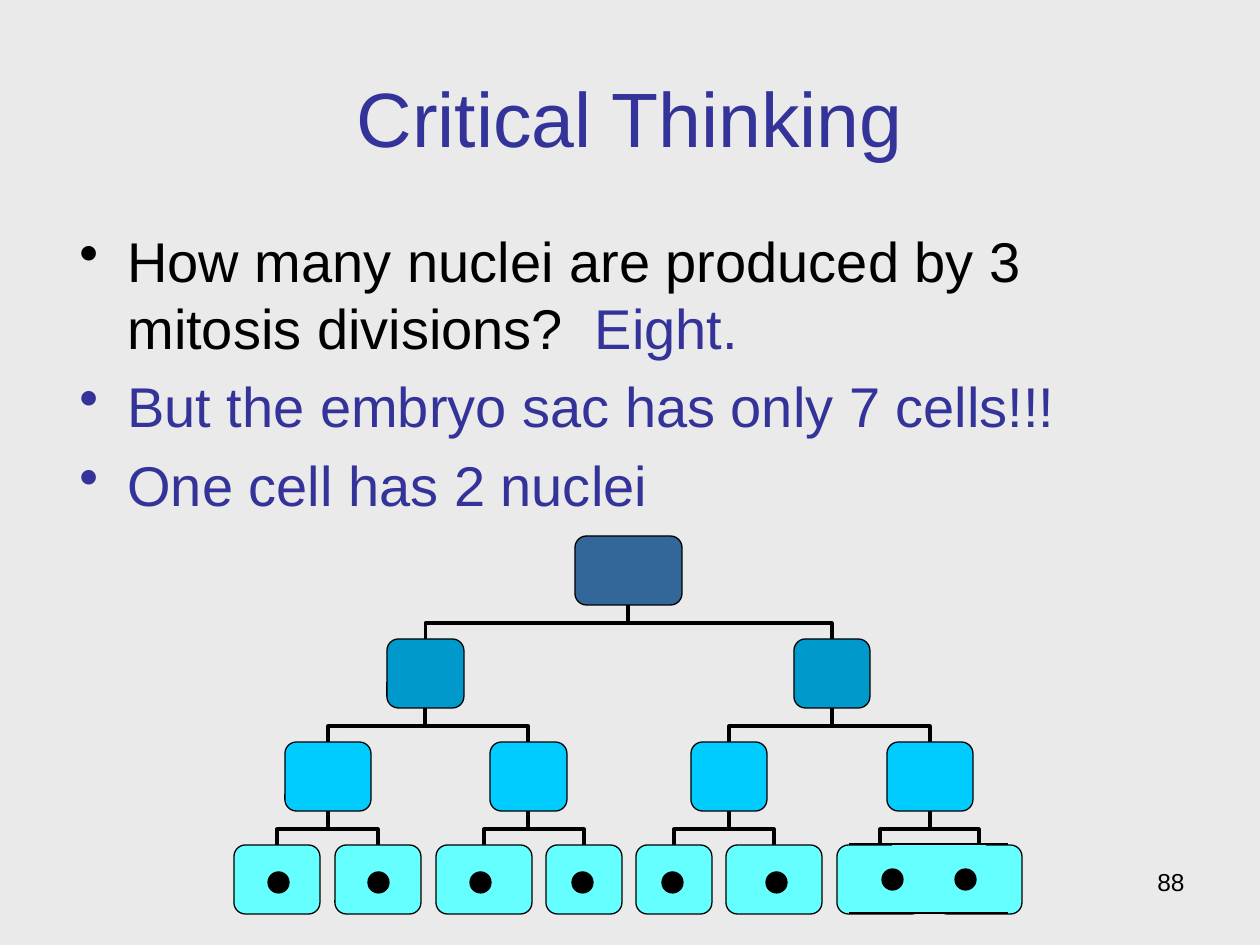
"""Build the slide on nuclei and cells of the embryo sac."""
from dataclasses import dataclass
from typing import NamedTuple

from lxml import etree
from pptx import Presentation
from pptx.dml.color import RGBColor
from pptx.enum.shapes import MSO_CONNECTOR, MSO_SHAPE
from pptx.enum.text import MSO_ANCHOR, PP_ALIGN
from pptx.oxml.ns import qn
from pptx.util import Emu, Pt

ELBOW, LINE = MSO_CONNECTOR.ELBOW, MSO_CONNECTOR.STRAIGHT
ROUND, RECT, OVAL = MSO_SHAPE.ROUNDED_RECTANGLE, MSO_SHAPE.RECTANGLE, MSO_SHAPE.OVAL
LEFT, CENTER, RIGHT = PP_ALIGN.LEFT, PP_ALIGN.CENTER, PP_ALIGN.RIGHT
MIDDLE = MSO_ANCHOR.MIDDLE
SCALE = 914400 / 126


@dataclass(frozen=True)
class Theme:
    font: str = "Arial"
    back: str = "EAEAEA"
    ink: str = "000000"
    accent: str = "333399"
    levels: tuple = ("336699", "0099CC", "00CCFF", "66FFFF")
    title: int = 44
    body: int = 32
    small: int = 14
    branch: float = 2.25
    edge: float = 0.75
    rim: float = 1


class Box(NamedTuple):
    x: int
    y: int
    w: int
    h: int

    @property
    def mid(self) -> float:
        return self.x + self.w / 2


class Part(NamedTuple):
    text: str
    color: str


THEME = Theme()
TOP, PITCH, HIGH, DOT = 536, 103, 69, 21
TREE = (
    ((575, 107),),
    ((387, 77), (794, 76)),
    ((285, 86), (490, 77), (691, 76), (887, 86)),
    ((234, 86), (335, 86), (436, 96), (546, 76),
     (636, 76), (726, 96), (837, 86), (936, 86)),
)
DOTS = ((268, 872), (368, 872), (470, 872), (572, 872),
        (662, 872), (766, 872), (882, 869), (955, 869))
MERGE = Box(892, 844, 94, 69)
POINTS = (
    (Part("How many nuclei are produced by 3 mitosis divisions?  ", THEME.ink),
     Part("Eight.", THEME.accent)),
    (Part("But the embryo sac has only 7 cells!!!", THEME.accent),),
    (Part("One cell has 2 nuclei", THEME.accent),),
)


def px(size: float) -> Emu:
    """Turn pixels into EMU."""
    return Emu(round(size * SCALE))


def rgb(code: str) -> RGBColor:
    """Read a hex colour."""
    return RGBColor.from_string(code)


def place(shape, box: Box) -> None:
    """Move a shape to a box."""
    shape.left, shape.top, shape.width, shape.height = map(px, box)


def style(para, size: int, align, color: str = "") -> None:
    """Set the font and alignment of a paragraph."""
    para.alignment = align
    para.font.name, para.font.size = THEME.font, Pt(size)
    if color:
        para.font.color.rgb = rgb(color)


def bullet(para) -> None:
    """Give a paragraph a hanging bullet."""
    props = para._p.get_or_add_pPr()
    props.set("marL", str(px(48)))
    props.set("indent", str(-px(48)))
    mark = etree.Element(qn("a:buChar"), char="•")
    rest = props.find(qn("a:defRPr"))
    rest.addprevious(mark)


def block(slide, box: Box):
    """Add a wrapping text box and return its frame."""
    frame = slide.shapes.add_textbox(*map(px, box)).text_frame
    frame.word_wrap = True
    return frame


def points(slide, box: Box) -> None:
    """Write the bulleted points."""
    frame = block(slide, box)
    for i, parts in enumerate(POINTS):
        para = frame.add_paragraph() if i else frame.paragraphs[0]
        mixed = len(parts) > 1
        style(para, THEME.body, LEFT, "" if mixed else parts[0].color)
        para.space_before = Pt(6.4)
        bullet(para)
        for part in parts:
            run = para.add_run()
            run.text = part.text
            if mixed:
                run.font.color.rgb = rgb(part.color)


def solid(slide, kind, box: Box, fill: str, edge: bool = True) -> None:
    """Draw a filled shape."""
    shape = slide.shapes.add_shape(kind, *map(px, box))
    shape.shadow.inherit = False
    shape.fill.solid()
    shape.fill.fore_color.rgb = rgb(fill)
    if edge:
        shape.line.color.rgb = rgb(THEME.ink)
        shape.line.width = Pt(THEME.edge)
    else:
        shape.line.fill.background()


def link(slide, kind, ends: tuple, width: float):
    """Draw a plain connector."""
    line = slide.shapes.add_connector(kind, *map(px, ends))
    line.line.color.rgb = rgb(THEME.ink)
    line.line.width = Pt(width)
    etree.SubElement(line._element.spPr, qn("a:effectLst"))
    return line


def branch(slide, kid: Box, root: Box) -> None:
    """Join the top of a child to the foot of its parent."""
    foot = root.y + root.h
    rise, run = kid.y - foot, abs(kid.mid - root.mid)
    x = (kid.mid + root.mid - rise) / 2
    y = (kid.y + foot - run) / 2
    east = kid.mid > root.mid
    start, stop = (x + rise, x) if east else (x, x + rise)
    line = link(slide, ELBOW, (start, y, stop, y + run), THEME.branch)
    props = line._element.spPr
    props.find(qn("a:xfrm")).set("rot", str((90 if east else 270) * 60000))
    guides = props.find(qn("a:prstGeom")).find(qn("a:avLst"))
    etree.SubElement(guides, qn("a:gd"), name="adj1", fmla="val 45900")


def tree(slide) -> None:
    """Draw the three divisions and the nuclei."""
    rows = [[Box(x, TOP + i * PITCH, w, HIGH) for x, w in row]
            for i, row in enumerate(TREE)]
    for roots, kids in zip(rows, rows[1:]):
        for i, kid in enumerate(kids):
            branch(slide, kid, roots[i // 2])
    for row, fill in zip(rows, THEME.levels):
        for box in row:
            solid(slide, ROUND, box, fill)
    solid(slide, RECT, MERGE, THEME.levels[-1], False)
    for y in (MERGE.y + MERGE.h, MERGE.y):
        link(slide, LINE, (849, y, 1008, y), THEME.rim)
    for x, y in DOTS:
        solid(slide, OVAL, Box(x, y, DOT, DOT), THEME.ink)


def main() -> None:
    """Build and save the slide."""
    deck = Presentation()
    deck.slide_width, deck.slide_height = px(1260), px(945)
    slide = deck.slides.add_slide(deck.slide_layouts[5])
    slide.background.fill.solid()
    slide.background.fill.fore_color.rgb = rgb(THEME.back)
    title = slide.shapes.title
    place(title, Box(63, 38, 1134, 157))
    title.text_frame.text = "Critical Thinking"
    title.text_frame.vertical_anchor = MIDDLE
    style(title.text_frame.paragraphs[0], THEME.title, CENTER, THEME.accent)
    number = block(slide, Box(903, 861, 294, 66)).paragraphs[0]
    number.text = "88"
    style(number, THEME.small, RIGHT, THEME.ink)
    points(slide, Box(67, 220, 1134, 624))
    tree(slide)
    deck.save("out.pptx")


if __name__ == "__main__":
    main()
